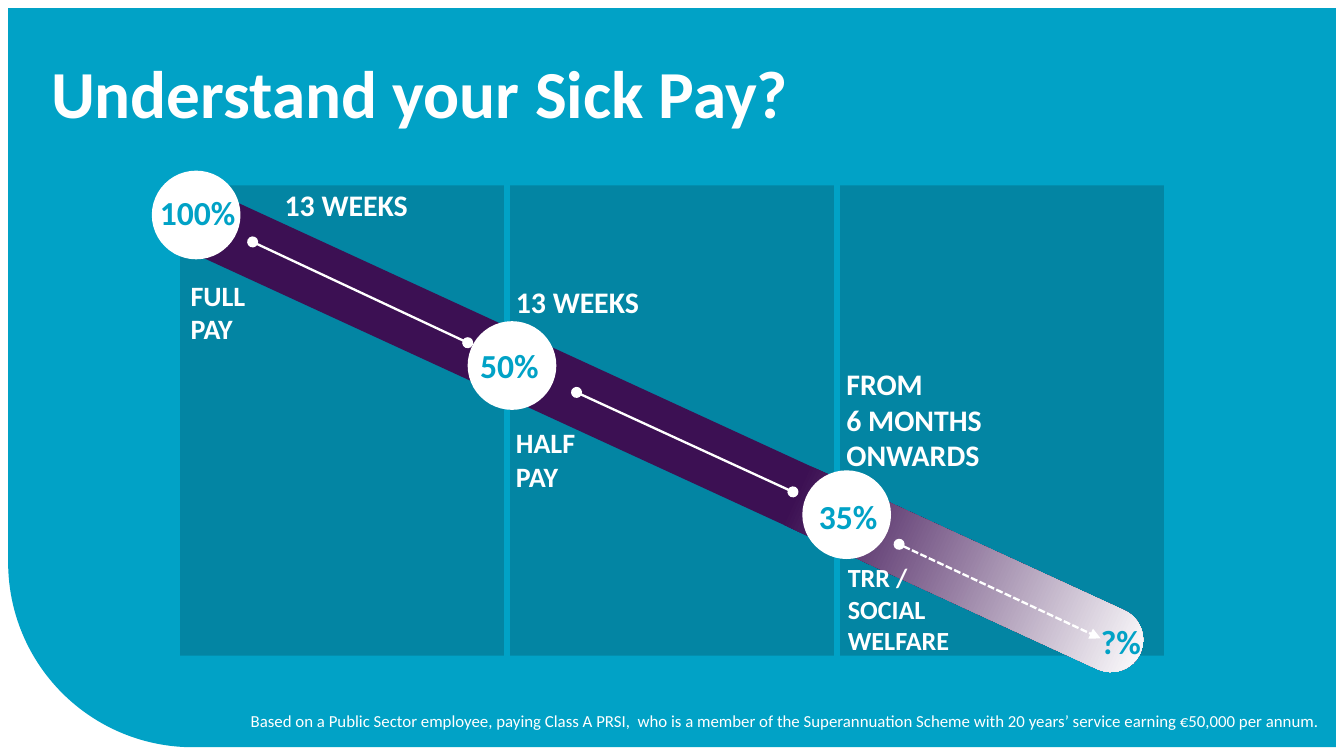
from dataclasses import dataclass
from typing import Optional

import pptx
import pptx.dml.color
import pptx.enum.dml
import pptx.enum.shapes
import pptx.enum.text
import pptx.oxml
import pptx.oxml.ns
import pptx.util

Inches = pptx.util.Inches
Pt = pptx.util.Pt
RGBColor = pptx.dml.color.RGBColor
SHAPE = pptx.enum.shapes.MSO_SHAPE
ALIGN = pptx.enum.text.PP_ALIGN

WHITE = RGBColor(0xFF, 0xFF, 0xFF)
TEAL = RGBColor(0x01, 0xA2, 0xC6)
DARK_TEAL = RGBColor(0x03, 0x85, 0xA3)
PURPLE = RGBColor(0x3C, 0x10, 0x53)

FONT = "Calibri"
PANEL_TOP, FIRST_PANEL, LAST_PANEL = 1.38, 1.34, 6.25
PANEL_PITCH = (LAST_PANEL - FIRST_PANEL) / 2
MARKER_SIZE = 0.66


@dataclass
class Label:
    text: str
    left: float
    top: float
    width: float
    height: float
    size: float
    color: RGBColor = WHITE
    align: ALIGN = ALIGN.LEFT
    bold: bool = True


@dataclass
class Stage:
    """One pay level: its percentage, circle, time arrow and captions."""
    percent: Label
    marker: Optional[tuple[float, float]] = None
    start: tuple[float, float] = (0, 0)
    end: tuple[float, float] = (0, 0)
    captions: tuple[Label, ...] = ()
    open_ended: bool = False


def percent(text: str, left: float, top: float) -> Label:
    return Label(text, left, top, 0.98, 0.4, 18, TEAL, ALIGN.CENTER)


STAGES = [
    Stage(percent("100%", 0.98, 1.38), (1.13, 1.27), (1.88, 1.8), (3.48, 2.55),
          (Label("13 WEEKS  ", 2.02, 1.34, 1.36, 0.37, 16),
           Label("FULL\nPAY", 1.32, 2.02, 1.36, 0.61, 15))),
    Stage(percent("50%", 3.3, 2.52), (3.48, 2.39), (4.29, 2.92), (5.9, 3.66),
          (Label("13 WEEKS  ", 3.74, 2.06, 1.65, 0.37, 16),
           Label("HALF \vPAY", 3.74, 3.12, 1.65, 0.61, 15))),
    Stage(percent("35%", 5.82, 3.64), (5.97, 3.5), (6.69, 4.05), (8.19, 4.75),
          (Label("FROM \v6 MONTHS \vONWARDS", 6.2, 2.67, 2.97, 0.91, 16),
           Label("TRR / \vSOCIAL \vWELFARE", 6.21, 4.13, 1.94, 0.81, 14)),
          open_ended=True),
    Stage(percent("?%", 7.85, 4.57)),
]
FOOTNOTE = Label(
    "Based on a Public Sector employee, paying Class A PRSI,  who is a member of the "
    "Superannuation Scheme with 20 years’ service earning €50,000 per annum. ",
    1.25, 5.24, 8.68, 0.25, 9, align=ALIGN.RIGHT, bold=False)
TITLE = Label("Understand your Sick Pay?", 0.28, 0.21, 9, 0.94, 36)


def add_block(slide, kind: SHAPE, left: float, top: float, width: float, height: float,
              color: RGBColor):
    block = slide.shapes.add_shape(kind, Inches(left), Inches(top), Inches(width), Inches(height))
    block.shadow.inherit = False
    block.fill.solid()
    block.fill.fore_color.rgb = color
    block.line.fill.background()
    return block


def write_text(frame, label: Label) -> None:
    frame.text = label.text
    frame.word_wrap = True
    for paragraph in frame.paragraphs:
        paragraph.alignment = label.align
        paragraph.font.name = FONT
        paragraph.font.size = Pt(label.size)
        paragraph.font.bold = label.bold
        paragraph.font.color.rgb = label.color


def add_label(slide, label: Label) -> None:
    box = slide.shapes.add_textbox(Inches(label.left), Inches(label.top),
                                   Inches(label.width), Inches(label.height))
    write_text(box.text_frame, label)


def add_time_arrow(slide, stage: Stage) -> None:
    arrow = slide.shapes.add_connector(pptx.enum.shapes.MSO_CONNECTOR.STRAIGHT,
                                       *map(Inches, stage.start + stage.end))
    arrow.line.color.rgb = WHITE
    arrow.line.width = Pt(1.25)
    if stage.open_ended:
        arrow.line.dash_style = pptx.enum.dml.MSO_LINE.SQUARE_DOT
    # Line ends, then an empty effect list against the theme shadow
    properties = arrow._element.spPr
    outline = arrow.line._get_or_add_ln()
    tail = "triangle" if stage.open_ended else "oval"
    for tag, end in (("a:headEnd", "oval"), ("a:tailEnd", tail)):
        element = pptx.oxml.parse_xml(f"<{tag} {pptx.oxml.ns.nsdecls('a')}/>")
        element.set("type", end)
        outline.append(element)
    properties.append(pptx.oxml.parse_xml(f"<a:effectLst {pptx.oxml.ns.nsdecls('a')}/>"))


def add_stage(slide, stage: Stage) -> None:
    if stage.marker:
        add_block(slide, SHAPE.OVAL, *stage.marker, MARKER_SIZE, MARKER_SIZE, WHITE)
        add_time_arrow(slide, stage)
    for label in (stage.percent, *stage.captions):
        add_label(slide, label)


def main() -> None:
    # Widescreen slide, 16 to 9
    deck = pptx.Presentation()
    deck.slide_width = Inches(10)
    deck.slide_height = Inches(10 * 9 / 16)
    slide = deck.slides.add_slide(deck.slide_layouts[5])

    # Background with one rounded corner at the bottom left
    backdrop = add_block(slide, SHAPE.ROUND_1_RECTANGLE, 0.06, 0.06, 9.88, 5.5, TEAL)
    backdrop.adjustments[0] = 0.25
    backdrop.rotation = 180

    # Three period panels
    for column in range(3):
        add_block(slide, SHAPE.RECTANGLE, FIRST_PANEL + column * PANEL_PITCH, PANEL_TOP,
                  2.41, 3.5, DARK_TEAL)

    # Falling pay band, fading out at its end
    band = add_block(slide, SHAPE.ROUNDED_RECTANGLE, 0.85, 2.95, 8, 0.48, PURPLE)
    band.adjustments[0] = 0.5
    band.rotation = 24.7
    band.fill.gradient()
    band.fill.gradient_angle = 0
    for stop, (position, color) in zip(band.fill.gradient_stops, ((0.64, PURPLE), (0.99, WHITE))):
        stop.position = position
        stop.color.rgb = color

    # Title, brought in front of the background
    title = slide.shapes.title
    title.left, title.top = Inches(TITLE.left), Inches(TITLE.top)
    title.width, title.height = Inches(TITLE.width), Inches(TITLE.height)
    write_text(title.text_frame, TITLE)
    title.text_frame.vertical_anchor = pptx.enum.text.MSO_ANCHOR.MIDDLE
    slide.shapes._spTree.append(title._element)

    # Pay stages and footnote
    for stage in STAGES:
        add_stage(slide, stage)
    add_label(slide, FOOTNOTE)

    deck.save("out.pptx")


if __name__ == "__main__":
    main()
